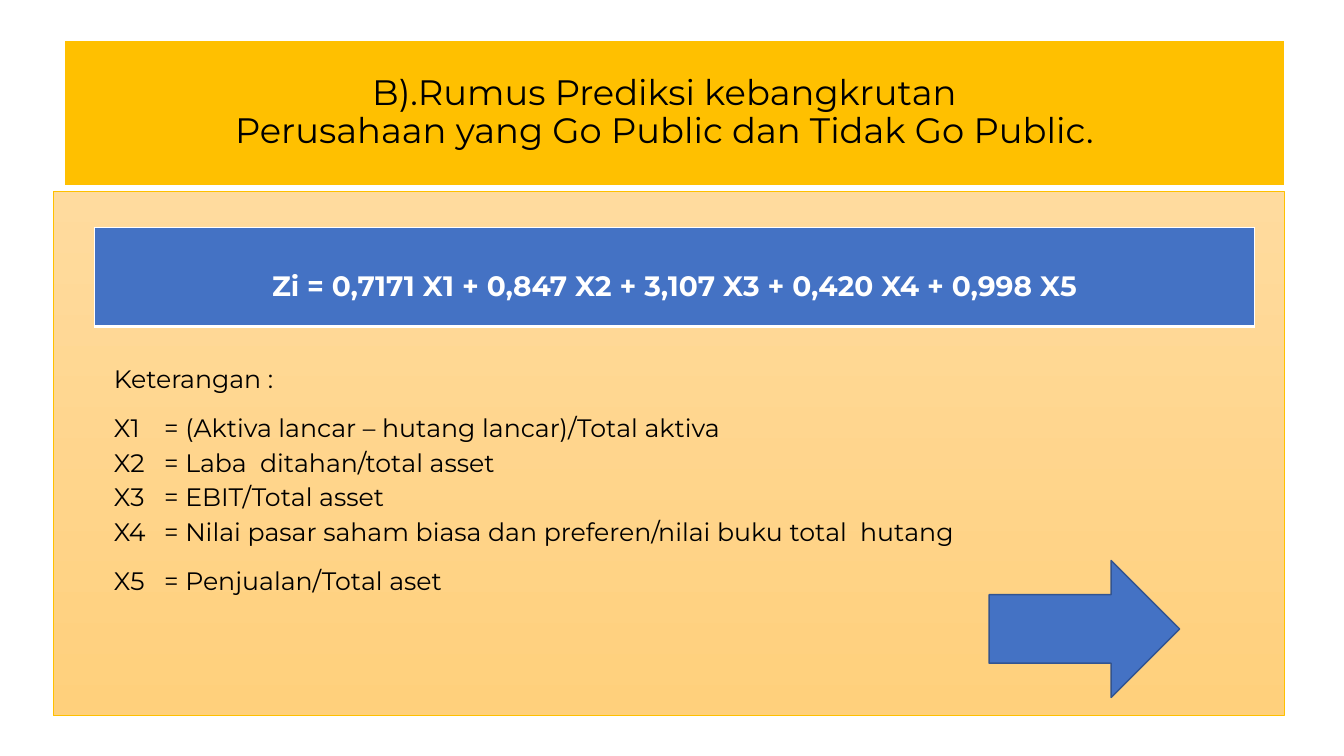
from dataclasses import dataclass

from lxml.etree import SubElement
from pptx import Presentation
from pptx.dml.color import RGBColor as Rgb
from pptx.enum.shapes import MSO_SHAPE as Kind
from pptx.enum.text import MSO_ANCHOR as Anchor, PP_ALIGN as Align
from pptx.oxml.ns import qn
from pptx.util import Pt

PX = 9144  # EMU per px, 100 px to the inch
FONT = "Montserrat"
HUES = {
    "gold": "FFC000", "white": "FFFFFF", "black": "000000", "blue": "4472C4",
    "navy": "325491", "light": "FFDB9E", "deep": "FFD07C",
}


@dataclass
class Box:
    kind: Kind
    place: tuple[int, int, int, int]
    fill: tuple[str, ...]
    line: str
    width: float


@dataclass
class Line:
    text: str
    size: float
    align: Align
    space: float
    after: int = 0
    bold: bool = False
    hue: str = "black"
    indent: dict[str, int] | None = None


def tint(name: str) -> Rgb:
    return Rgb.from_string(HUES[name])


def scale(place: tuple[int, ...]) -> list[int]:
    return [n * PX for n in place]


def draw(slide, box: Box):
    shape = slide.shapes.add_shape(box.kind, *scale(box.place))
    shape.shadow.inherit = False
    if len(box.fill) == 1:
        shape.fill.solid()
        shape.fill.fore_color.rgb = tint(box.fill[0])
    else:
        shape.fill.gradient()
        shape.fill.gradient_angle = 270
        for stop, name in zip(shape.fill.gradient_stops, box.fill):
            stop.color.rgb = tint(name)
    shape.line.color.rgb = tint(box.line)
    shape.line.width = Pt(box.width)
    return shape


def write(frame, lines: list[Line]) -> None:
    frame.word_wrap = True
    for i, line in enumerate(lines):
        para = frame.paragraphs[0] if i == 0 else frame.add_paragraph()
        form = {"alignment": line.align, "line_spacing": line.space,
                "space_before": Pt(0), "space_after": Pt(line.after)}
        for key, value in form.items():
            setattr(para, key, value)
        for key, value in (line.indent or {}).items():
            para._p.get_or_add_pPr().set(key, str(value * PX))
        run = para.add_run()
        run.text = line.text
        form = {"name": FONT, "size": Pt(line.size), "bold": line.bold}
        for key, value in form.items():
            setattr(run.font, key, value)
        run.font.color.rgb = tint(line.hue)


def edge(cell, side: str, width: float) -> None:
    rule = SubElement(cell._tc.get_or_add_tcPr(), qn(f"a:{side}"), w=str(Pt(width)))
    fill = SubElement(rule, qn("a:solidFill"))
    SubElement(fill, qn("a:srgbClr"), val=HUES["white"])


def main() -> None:
    deck = Presentation()
    deck.slide_width, deck.slide_height = scale((1333, 750))
    slide = deck.slides.add_slide(deck.slide_layouts[6])

    # Title band
    band = draw(slide, Box(Kind.RECTANGLE, (63, 40, 1212, 145), ("gold",), "white", 1.5))
    band.text_frame.vertical_anchor = Anchor.MIDDLE
    write(band.text_frame, [
        Line("B).Rumus Prediksi kebangkrutan", 25.2, Align.CENTER, 0.9, indent={"marR": 20}),
        Line("Perusahaan yang Go Public dan Tidak Go Public.", 25.2, Align.CENTER, 0.9),
    ])

    # Panel with the key to the variables
    panel = draw(slide, Box(Kind.RECTANGLE, (53, 190, 1221, 520), ("light", "deep"), "gold", 0.5))
    panel.text_frame.vertical_anchor = Anchor.TOP
    panel.text_frame.margin_top = 166 * PX
    terms = [
        ("Keterangan :", 10),
        ("X1\t= (Aktiva lancar – hutang lancar)/Total aktiva", 0),
        ("X2\t= Laba  ditahan/total asset", 0),
        ("X3\t= EBIT/Total asset", 0),
        ("X4\t= Nilai pasar saham biasa dan preferen/nilai buku total  hutang", 10),
        ("X5\t= Penjualan/Total aset", 0),
    ]
    hang = {"marL": 100, "indent": -50}
    write(panel.text_frame, [
        Line(text, 18, Align.LEFT, 1.15, after, indent=hang) for text, after in terms
    ])

    # Formula table
    table = slide.shapes.add_table(1, 1, *scale((94, 226, 1150, 98))).table
    table.first_row = table.horz_banding = False
    cell = table.cell(0, 0)
    form = {"margin_left": 7 * PX, "margin_right": 7 * PX, "margin_top": 36 * PX,
            "margin_bottom": 0, "vertical_anchor": Anchor.TOP}
    for key, value in form.items():
        setattr(cell, key, value)
    for side, width in {"lnL": 1, "lnR": 1, "lnT": 1, "lnB": 3}.items():
        edge(cell, side, width)
    cell.fill.solid()
    cell.fill.fore_color.rgb = tint("blue")
    write(cell.text_frame, [
        Line("Zi = 0,7171 X1 + 0,847 X2 + 3,107 X3 + 0,420 X4 + 0,998 X5",
             20, Align.CENTER, 1.15, bold=True, hue="white"),
    ])

    # Arrow to the next step
    draw(slide, Box(Kind.RIGHT_ARROW, (981, 556, 189, 136), ("blue",), "navy", 1))

    deck.save("out.pptx")


if __name__ == "__main__":
    main()
